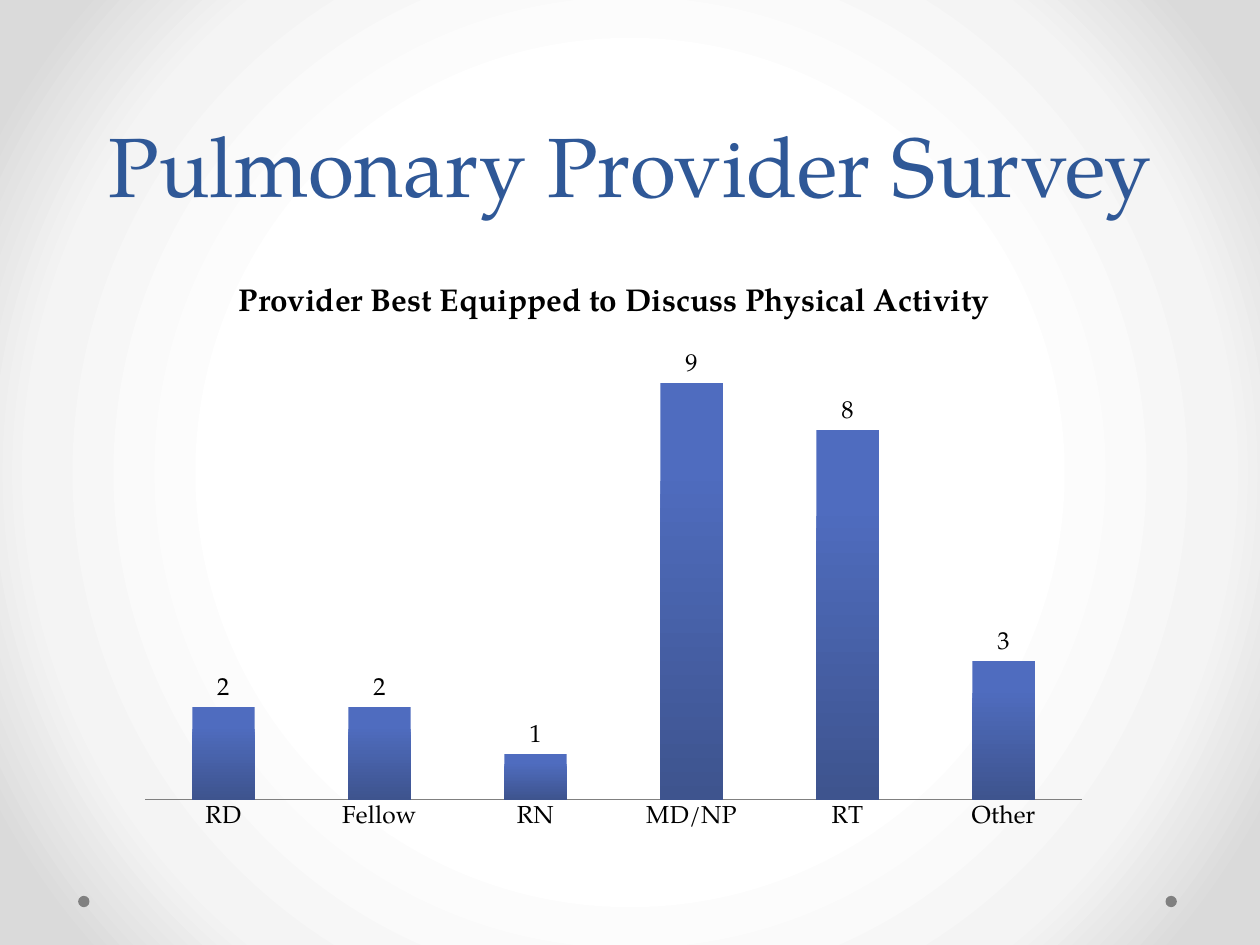
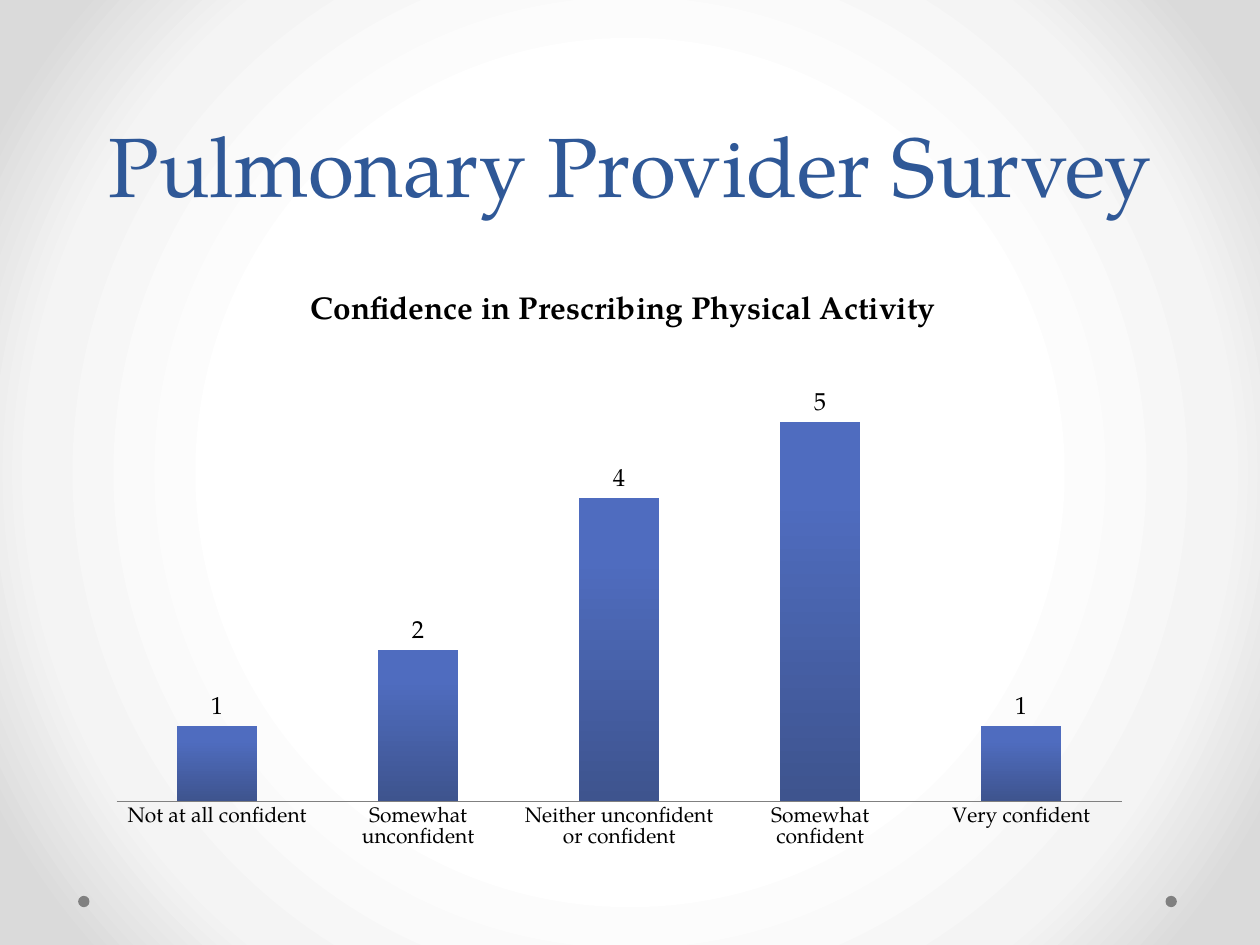
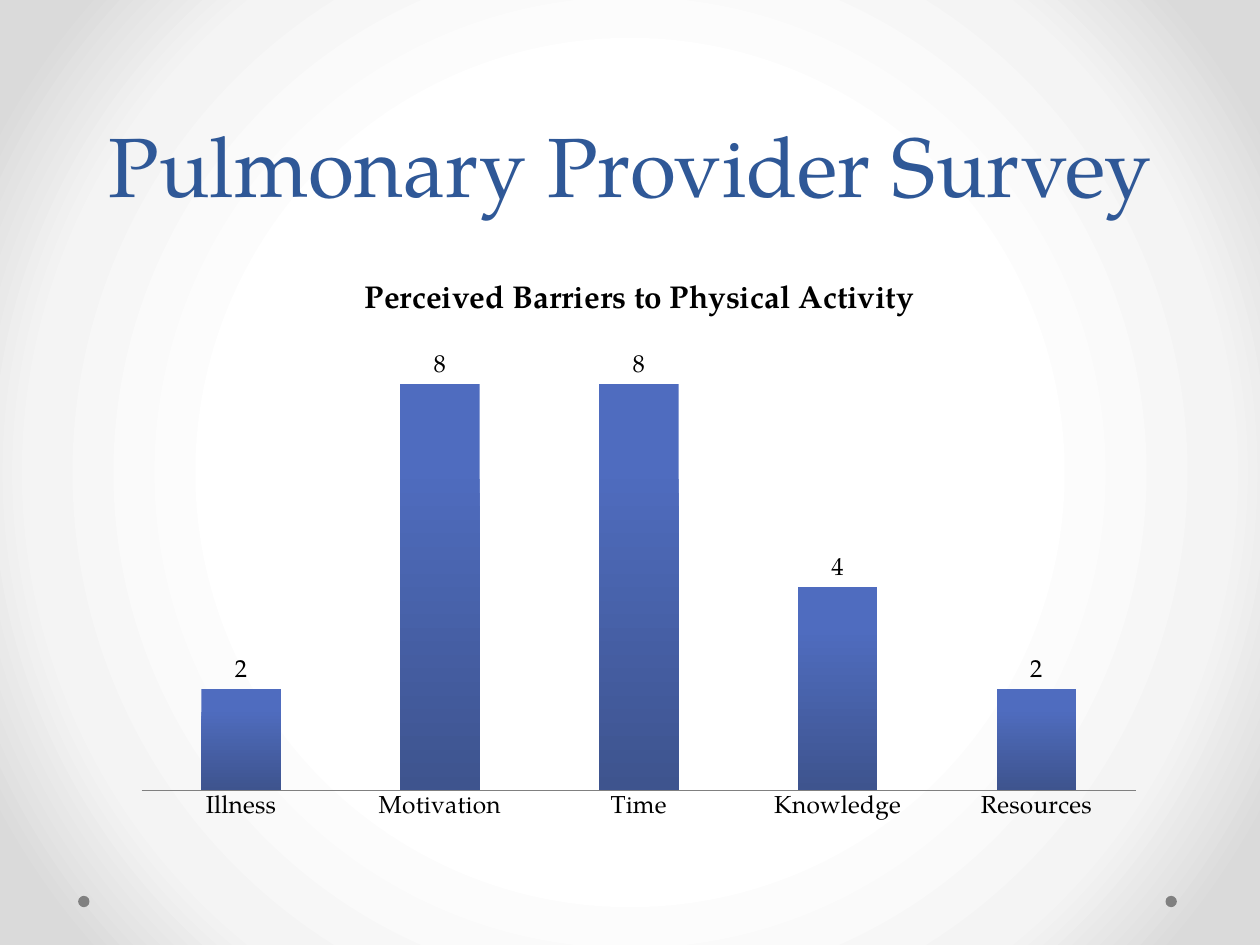
"""Builds the pulmonary provider survey deck: three column charts on a shared master."""
from pptx import Presentation
from pptx.chart.data import CategoryChartData
from pptx.dml.color import RGBColor
from pptx.enum.chart import XL_CHART_TYPE, XL_LABEL_POSITION, XL_TICK_LABEL_POSITION, XL_TICK_MARK
from pptx.enum.shapes import MSO_SHAPE
from pptx.enum.text import MSO_ANCHOR, MSO_AUTO_SIZE, PP_ALIGN
from pptx.oxml import parse_xml
from pptx.oxml.ns import nsdecls
from pptx.util import Inches, Pt

FONT = "TeX Gyre Pagella"
TITLE_BLUE = RGBColor(0x2F, 0x58, 0x97)
BAR_TOP = RGBColor(0x4F, 0x6C, 0xBF)
BAR_BOTTOM = RGBColor(0x3E, 0x54, 0x8E)
GRAY = RGBColor(0x80, 0x80, 0x80)
BLACK = RGBColor(0, 0, 0)
BACKDROP = [(50, RGBColor(0xFF, 0xFF, 0xFF)), (76, RGBColor(0xF4, 0xF4, 0xF4)),
            (92, RGBColor(0xDA, 0xDA, 0xDA))]

PAGE_TITLE = "Pulmonary Provider Survey"
DOT_LEFTS = (0.62, 9.25)
SURVEYS = [
    {"title": "Provider Best Equipped to Discuss Physical Activity",
     "answers": {"RD": 2, "Fellow": 2, "RN": 1, "MD/NP": 9, "RT": 8, "Other": 3},
     "frame": (1, 2.08, 7.74, 4.59), "title_left": 0.11, "plot_height": 0.8,
     "axis_size": 14, "axis_top": 10},
    {"title": "Confidence in Prescribing Physical Activity",
     "answers": {"Not at all confident": 1, "Somewhat unconfident": 2,
                 "Neither unconfident or confident": 4, "Somewhat confident": 5,
                 "Very confident": 1},
     "frame": (0.76, 2.14, 8.31, 4.69), "title_left": 0.2, "plot_height": 0.77,
     "axis_size": 12, "axis_top": 6},
    {"title": "Perceived Barriers to Physical Activity",
     "answers": {"Illness": 2, "Motivation": 8, "Time": 8, "Knowledge": 4, "Resources": 2},
     "frame": (0.96, 2.06, 8.22, 4.53), "title_left": 0.23, "plot_height": 0.8,
     "axis_size": 14, "axis_top": 9},
]


def style_font(font, size, color=BLACK, bold=False):
    font.name, font.size, font.bold = FONT, Pt(size), bold
    font.color.rgb = color


def paint_backdrop(master):
    stops = "".join(f'<a:gs pos="{position * 1000}"><a:srgbClr val="{color}"/></a:gs>'
                    for position, color in BACKDROP)
    content = master.element.cSld
    for old in content.xpath("p:bg"):
        content.remove(old)
    content.insert(0, parse_xml(
        f'<p:bg {nsdecls("p", "a")}><p:bgPr><a:gradFill rotWithShape="1">'
        f'<a:gsLst>{stops}</a:gsLst><a:path path="circle">'
        '<a:fillToRect l="50000" t="50000" r="50000" b="50000"/></a:path></a:gradFill>'
        '<a:effectLst/></p:bgPr></p:bg>'))


def add_master_dots(page, master):
    for left in DOT_LEFTS:
        dot = page.shapes.add_shape(MSO_SHAPE.OVAL, Inches(left), Inches(7.11),
                                    Inches(0.09), Inches(0.09))
        dot.shadow.inherit = False
        dot.fill.solid()
        dot.fill.fore_color.rgb = GRAY
        dot.line.fill.background()
        master.element.cSld.spTree.append(dot.element)


def place(shape, left, top, width, height):
    shape.left, shape.top = Inches(left), Inches(top)
    shape.width, shape.height = Inches(width), Inches(height)


def fill_title(page):
    title = page.shapes.title
    place(title, 0.5, 0, 9, 1.75)
    frame = title.text_frame
    frame.text = PAGE_TITLE
    frame.vertical_anchor = MSO_ANCHOR.BOTTOM
    frame.auto_size = MSO_AUTO_SIZE.NONE
    para = frame.paragraphs[0]
    para.alignment, para.line_spacing = PP_ALIGN.CENTER, Pt(58)
    style_font(para.font, 48, TITLE_BLUE)


def set_layout(element, target="", **parts):
    """Pin a chart part at fractions of the chart frame."""
    modes = "".join(f'<c:{name}Mode val="edge"/>' for name in parts if name in "xy")
    values = "".join(f'<c:{name} val="{value}"/>' for name, value in parts.items())
    for old in element.xpath("c:layout"):
        element.remove(old)
    layout = parse_xml(f'<c:layout {nsdecls("c")}><c:manualLayout>{target}{modes}{values}'
                       '</c:manualLayout></c:layout>')
    texts = element.xpath("c:tx")
    element.insert(len(texts), layout)


def add_survey_chart(page, survey):
    data = CategoryChartData()
    data.categories = list(survey["answers"])
    data.add_series("Series 1", list(survey["answers"].values()))
    chart = page.shapes.add_chart(XL_CHART_TYPE.COLUMN_CLUSTERED,
                                  *map(Inches, survey["frame"]), data).chart
    style_font(chart.font, 10)
    chart.has_legend = False
    chart.has_title = True
    heading = chart.chart_title.text_frame
    heading.text = survey["title"]
    style_font(heading.paragraphs[0].font, 18, bold=True)
    chart.chart_title.include_in_layout = False
    set_layout(chart.chart_title._element, x=survey["title_left"], y=0.03)

    plot = chart.plots[0]
    plot.gap_width, plot.overlap, plot.vary_by_categories = 150, -25, False
    plot.has_data_labels = True
    labels = plot.data_labels
    labels.show_value, labels.position = True, XL_LABEL_POSITION.OUTSIDE_END
    style_font(labels.font, 14)
    bars = plot.series[0].format.fill
    bars.gradient()
    bars.gradient_angle = 270
    for stop, position, color in zip(bars.gradient_stops, (0.2, 1), (BAR_TOP, BAR_BOTTOM)):
        stop.position, stop.color.rgb = position, color

    values, categories = chart.value_axis, chart.category_axis
    values.minimum_scale, values.maximum_scale = 0, survey["axis_top"]
    values.has_major_gridlines = values.visible = False
    categories.major_tick_mark = XL_TICK_MARK.NONE
    categories.tick_label_position = XL_TICK_LABEL_POSITION.NEXT_TO_AXIS
    categories.format.line.color.rgb = GRAY
    style_font(categories.tick_labels.font, survey["axis_size"])
    set_layout(chart._chartSpace.chart.plotArea, '<c:layoutTarget val="inner"/>',
               x=0.02, y=0.13, w=0.96, h=survey["plot_height"])


def main():
    deck = Presentation()
    deck.slide_width, deck.slide_height = Inches(10), Inches(7.5)
    paint_backdrop(deck.slide_master)
    for survey in SURVEYS:
        page = deck.slides.add_slide(deck.slide_layouts[5])
        fill_title(page)
        add_survey_chart(page, survey)
    add_master_dots(deck.slides[0], deck.slide_master)
    deck.save("out.pptx")


if __name__ == "__main__":
    main()
